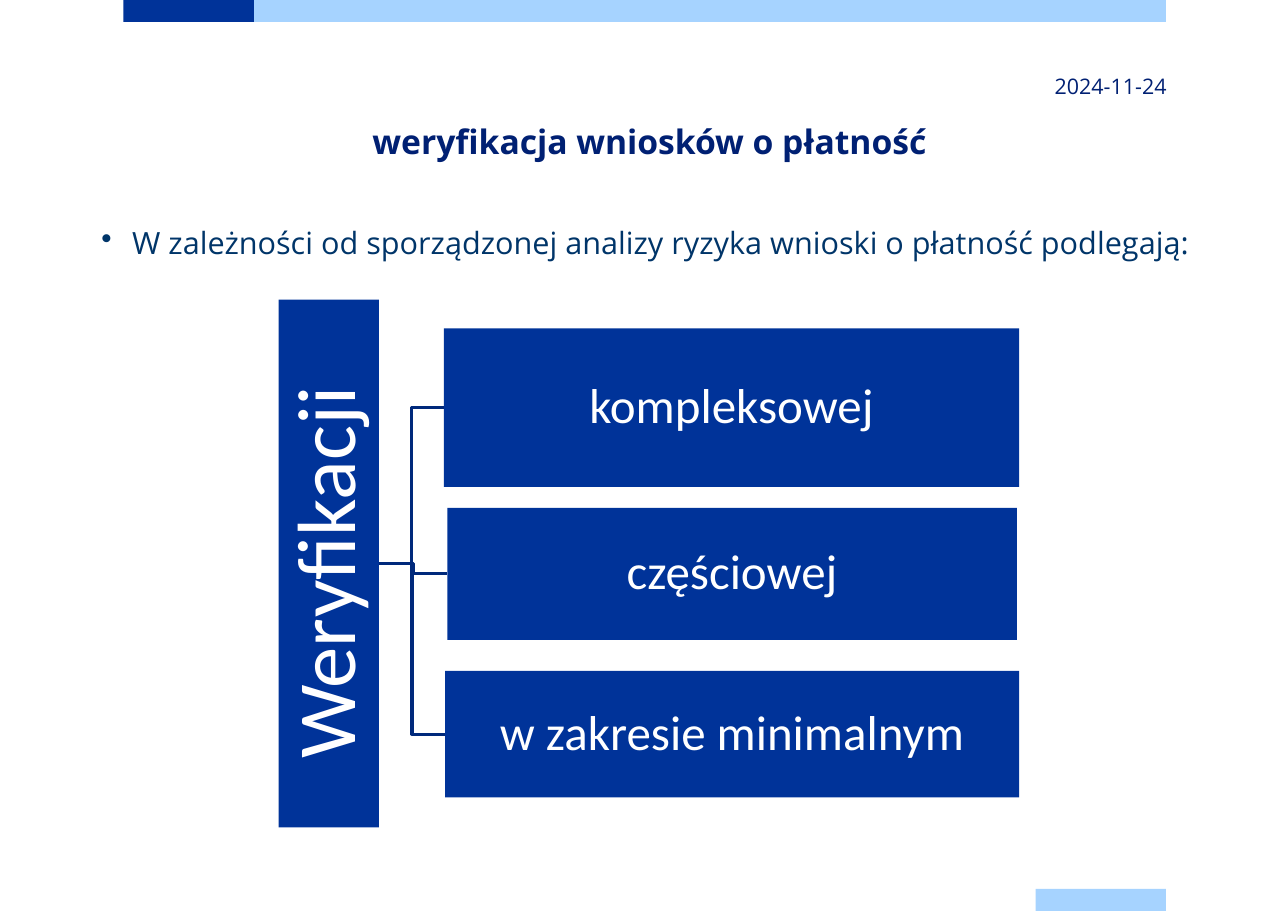
from collections import namedtuple
from dataclasses import dataclass

from lxml import etree
from pptx import Presentation
from pptx import util as u
from pptx.dml.color import RGBColor
from pptx.enum import shapes, text
from pptx.oxml import ns


@dataclass(frozen=True)
class Theme:
    """Colours, fonts and type sizes of the deck."""
    navy: str = "003399"
    sky: str = "A6D3FF"
    line: str = "00297B"
    heading: str = "002073"
    body: str = "003569"
    white: str = "FFFFFF"
    sans: str = "Open Sans"
    diagram: str = "Calibri"
    title_size: int = 22
    body_size: int = 20
    date_size: int = 14
    trunk_size: int = 54
    branch_size: int = 32


THEME = Theme()
BRANCHES = [
    ("kompleksowej", (22.32, 5.43, 77.68, 30.06)),
    ("częściowej", (22.77, 39.46, 76.93, 25.05)),
    ("w zakresie minimalnym", (22.47, 70.35, 77.53, 24.01)),
]


class Box(namedtuple("Box", "left top width height")):
    """A rectangle that yields inner boxes given as percentages of itself."""

    def inner(self, left, top, width, height):
        """Return the inner box at the given percentages."""
        return Box(int(self.left + self.width * left / 100),
                   int(self.top + self.height * top / 100),
                   int(self.width * width / 100),
                   int(self.height * height / 100))


def add_block(page, box, colour):
    """Add a plain filled rectangle."""
    block = page.shapes.add_shape(shapes.MSO_SHAPE.RECTANGLE, *box)
    block.shadow.inherit = False
    block.fill.solid()
    block.fill.fore_color.rgb = RGBColor.from_string(colour)
    block.line.fill.background()
    return block


def write(shape, words, size, colour, font, align, anchor=text.MSO_ANCHOR.TOP,
          inset=(0, 0), spacing=None, bold=False, bullet=None):
    """Write one paragraph into a shape."""
    frame = shape.text_frame
    frame.word_wrap = True
    frame.vertical_anchor = anchor
    frame.margin_left = frame.margin_right = u.Inches(inset[0])
    frame.margin_top = frame.margin_bottom = u.Inches(inset[1])
    para = frame.paragraphs[0]
    para.text = words
    para.alignment = align
    if spacing:
        para.line_spacing = spacing
    if bullet:
        props = para._p.get_or_add_pPr()
        indent = u.Inches(0.28)
        props.set("marL", str(indent))
        props.set("indent", str(-indent))
        etree.SubElement(props, ns.qn("a:buChar")).set("char", bullet)
    para.font.name = font
    para.font.size = u.Pt(size)
    para.font.bold = bold
    para.font.color.rgb = RGBColor.from_string(colour)


def add_bars(page, area):
    """Add the brand bars at the top and bottom edges."""
    add_block(page, area.inner(9.58, 0, 10.15, 2.42), THEME.navy)
    add_block(page, area.inner(19.73, 0, 70.8, 2.42), THEME.sky)
    add_block(page, area.inner(80.41, 97.58, 10.12, 2.42), THEME.sky)


def add_heading(page, area):
    """Add the date, the title and the lead sentence."""
    align = text.PP_ALIGN
    date = page.shapes.add_textbox(*area.inner(73.74, 7.13, 16.85, 4.59))
    write(date, "2024-11-24", THEME.date_size, THEME.heading, THEME.sans,
          align.RIGHT, text.MSO_ANCHOR.MIDDLE, inset=(0, 0.08))
    title = page.shapes.add_textbox(*area.inner(7.87, 13.3, 85.12, 6.53))
    write(title, "weryfikacja wniosków o płatność", THEME.title_size,
          THEME.heading, THEME.sans, align.CENTER, bold=True)
    lead = page.shapes.add_textbox(*area.inner(7.87, 22.61, 85.12, 6.89))
    write(lead, "W zależności od sporządzonej analizy ryzyka wnioski o płatność podlegają:",
          THEME.body_size, THEME.body, THEME.sans, align.LEFT, spacing=1.5, bullet="•")


def add_node(page, box, words, size, inset):
    """Add a labelled rectangle of the tree."""
    node = add_block(page, box, THEME.navy)
    write(node, words, size, THEME.white, THEME.diagram, text.PP_ALIGN.CENTER,
          text.MSO_ANCHOR.MIDDLE, (inset, inset), spacing=0.9)
    return node


def join(page, trunk, branch):
    """Join the trunk's right side to a branch's left side with an elbow."""
    elbow = page.shapes.add_connector(shapes.MSO_CONNECTOR.ELBOW, 0, 0, 0, 0)
    elbow.begin_connect(trunk, 3)
    elbow.end_connect(branch, 1)
    elbow.line.color.rgb = RGBColor.from_string(THEME.line)
    elbow.line.width = u.Pt(2)
    etree.SubElement(elbow._element.spPr, ns.qn("a:effectLst"))


def add_tree(page, area):
    """Add the vertical trunk and its branches."""
    trunk = add_node(page, area.inner(0, 0, 13.54, 100), "Weryfikacji ",
                     THEME.trunk_size, 0.04)
    trunk.text_frame._txBody.bodyPr.set("vert", "vert270")
    for words, place in BRANCHES:
        branch = add_node(page, area.inner(*place), words, THEME.branch_size, 0.02)
        join(page, trunk, branch)


def main():
    """Build and save the deck."""
    deck = Presentation()
    deck.slide_width, deck.slide_height = u.Inches(11.69), u.Inches(8.27)
    page = deck.slides.add_slide(deck.slide_layouts[6])
    area = Box(0, 0, deck.slide_width, deck.slide_height)
    add_bars(page, area)
    add_heading(page, area)
    add_tree(page, area.inner(21.64, 32.89, 57.49, 57.92))
    deck.save("out.pptx")


if __name__ == "__main__":
    main()
